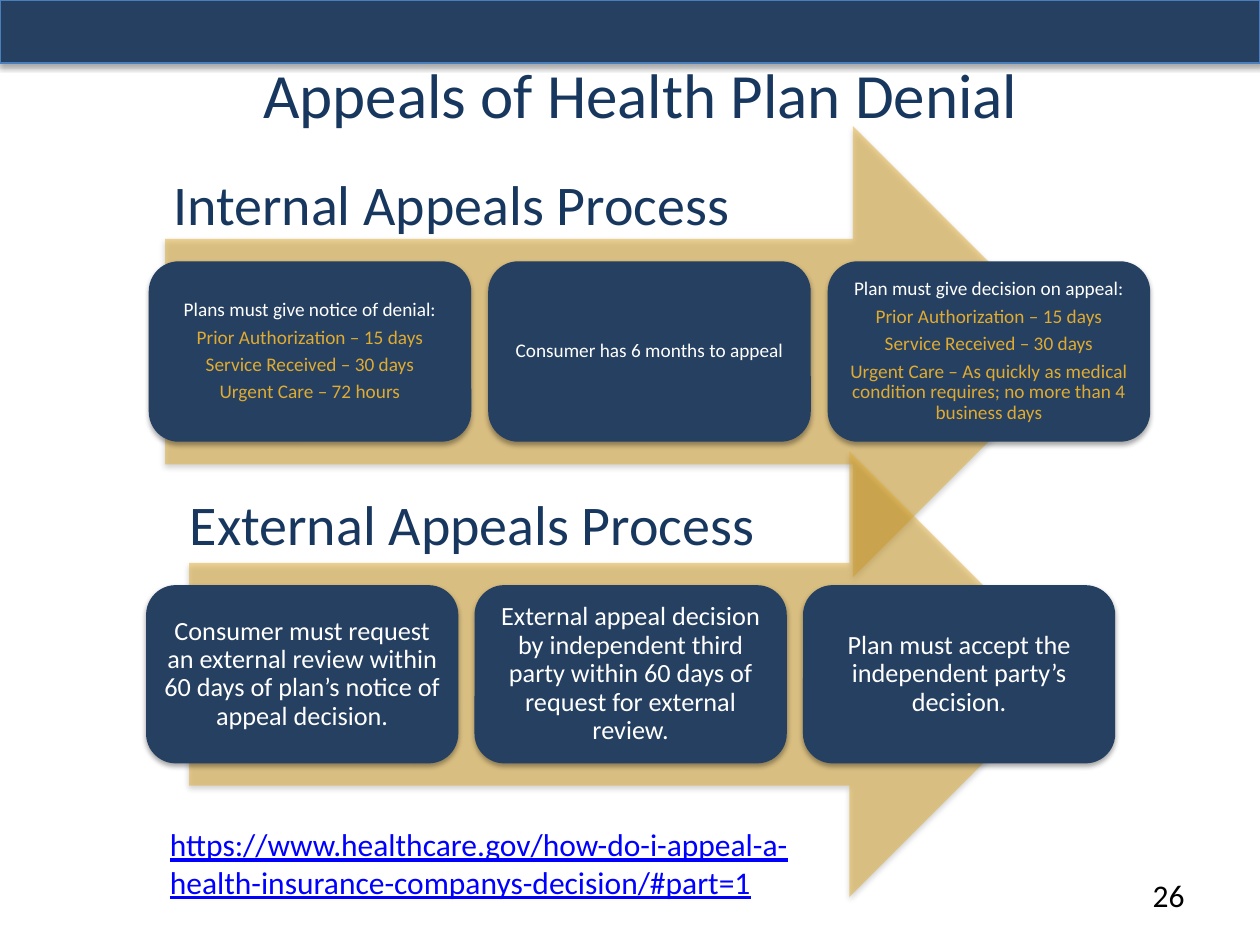
from lxml import etree
from pptx import Presentation
from pptx.dml.color import RGBColor
from pptx.enum.shapes import MSO_SHAPE
from pptx.enum.text import MSO_ANCHOR, PP_ALIGN
from pptx.oxml import parse_xml
from pptx.oxml.ns import nsdecls, qn
from pptx.util import Pt

RECTANGLE = MSO_SHAPE.RECTANGLE
ROUNDED = MSO_SHAPE.ROUNDED_RECTANGLE
ARROW = MSO_SHAPE.RIGHT_ARROW
MIDDLE, TOP = MSO_ANCHOR.MIDDLE, MSO_ANCHOR.TOP
LEFT, CENTER, RIGHT = PP_ALIGN.LEFT, PP_ALIGN.CENTER, PP_ALIGN.RIGHT

NAVY, GOLD, TITLE = "254061", "E0AB31", "17375E"
WHITE, BLACK, BLUE, EDGE = "FFFFFF", "000000", "0000FF", "4B7EBC"
FONT = "Calibri"


def color(value):
    return RGBColor.from_string(value)


class SlideBuilder:
    """Holds the current slide and draws its elements in one style."""

    def __init__(self, slide):
        self.slide = slide

    def shape(self, kind, left, top, width, height, fill, line=None, alpha=None):
        shape = self.slide.shapes.add_shape(
            kind, Pt(left), Pt(top), Pt(width), Pt(height))
        shape.fill.solid()
        shape.fill.fore_color.rgb = color(fill)
        if alpha is not None:
            tint = shape._element.spPr.find(qn("a:solidFill"))[0]
            etree.SubElement(tint, qn("a:alpha")).set("val", str(alpha * 1000))
        if line:
            shape.line.color.rgb = color(line)
            shape.line.width = Pt(0.75)
        else:
            shape.line.fill.background()
        self.shadow(shape)
        return shape

    def shadow(self, shape):
        shape.shadow.inherit = False
        effects = shape._element.spPr.find(qn("a:effectLst"))
        effects.append(parse_xml(
            f'<a:outerShdw {nsdecls("a")} blurRad="{Pt(3.1)}" dist="{Pt(1.8)}" '
            'dir="5400000" rotWithShape="0"><a:srgbClr val="000000">'
            '<a:alpha val="35000"/></a:srgbClr></a:outerShdw>'))

    def fill_text(self, frame, lines, size, align, anchor=MIDDLE, spacing=1.0,
                  after=0):
        """Fill a text frame with (text, colour) paragraphs."""
        frame.word_wrap = True
        frame.vertical_anchor = anchor
        for index, (text, ink) in enumerate(lines):
            para = frame.paragraphs[0] if index == 0 else frame.add_paragraph()
            para.text = text
            para.alignment = align
            para.line_spacing = spacing
            para.space_after = Pt(after)
            para.font.name = FONT
            para.font.size = Pt(size)
            para.font.color.rgb = color(ink)

    def textbox(self, left, top, width, height, text, size, ink, **style):
        box = self.slide.shapes.add_textbox(
            Pt(left), Pt(top), Pt(width), Pt(height))
        self.fill_text(box.text_frame, [(text, ink)], size, **style)
        return box

    def title(self, left, top, width, height, text):
        title = self.slide.shapes.title
        title.left, title.top = Pt(left), Pt(top)
        title.width, title.height = Pt(width), Pt(height)
        self.fill_text(title.text_frame, [(text, TITLE)], 36, CENTER, spacing=0.9)

    def process(self, arrow, left, width, gap, cards, size, inset):
        """Draw an arrow with a row of cards on its middle 40 percent."""
        self.shape(ARROW, *arrow, GOLD, alpha=50)
        top, height = arrow[1], arrow[3]
        for index, lines in enumerate(cards):
            card = self.shape(ROUNDED, left + index * (width + gap),
                              top + 0.3 * height, width, 0.4 * height, NAVY)
            frame = card.text_frame
            frame.margin_left = frame.margin_right = Pt(inset)
            frame.margin_top = frame.margin_bottom = Pt(inset)
            self.fill_text(frame, lines, size, CENTER, spacing=0.9,
                           after=0.35 * size)


def card_lines(heading, *details):
    return [(heading, WHITE)] + [(detail, GOLD) for detail in details]


def main():
    deck = Presentation()
    deck.slide_width, deck.slide_height = Pt(720), Pt(540)
    page = SlideBuilder(deck.slides.add_slide(deck.slide_layouts[5]))

    # Title and top band
    page.title(42, 18, 648, 75.6, "Appeals of Health Plan Denial")
    page.shape(RECTANGLE, 0, 0, 720, 36, NAVY, line=EDGE)

    # Internal process
    deadlines = ("Prior Authorization – 15 days", "Service Received – 30 days")
    internal = [
        card_lines("Plans must give notice of denial:", *deadlines,
                   "Urgent Care – 72 hours"),
        card_lines("Consumer has 6 months to appeal"),
        card_lines("Plan must give decision on appeal:", *deadlines,
                   "Urgent Care – As quickly as medical condition requires; "
                   "no more than 4 business days"),
    ]
    page.process((94.3, 72, 522, 257.8), 85, 184.3, 9.7, internal, 11, 3.6)
    page.textbox(-66, 78, 648, 75.6, "Internal Appeals Process", 32, TITLE,
                 align=CENTER)

    # External process
    external = [
        card_lines("Consumer must request an external review within 60 days "
                   "of plan’s notice of appeal decision."),
        card_lines("External appeal decision by independent third party within "
                   "60 days of request for external review."),
        card_lines("Plan must accept the independent party’s decision."),
    ]
    page.process((108, 258, 504.7, 254.6), 83.5, 178.4, 9.3, external, 15, 4.5)
    page.textbox(-54, 263.5, 648, 75.6, "External Appeals Process", 32, TITLE,
                 align=CENTER, spacing=0.9)

    # Web address and page number
    address = page.textbox(
        90, 468, 408, 72,
        "https://www.healthcare.gov/how-do-i-appeal-a-health-insurance-"
        "companys-decision/#part=1", 18, BLUE, align=LEFT, anchor=TOP)
    address.text_frame.paragraphs[0].font.underline = True
    page.textbox(642.2, 496.8, 41.8, 28.8, "26", 18, BLACK,
                 align=RIGHT, anchor=TOP)

    deck.save("out.pptx")


if __name__ == "__main__":
    main()
